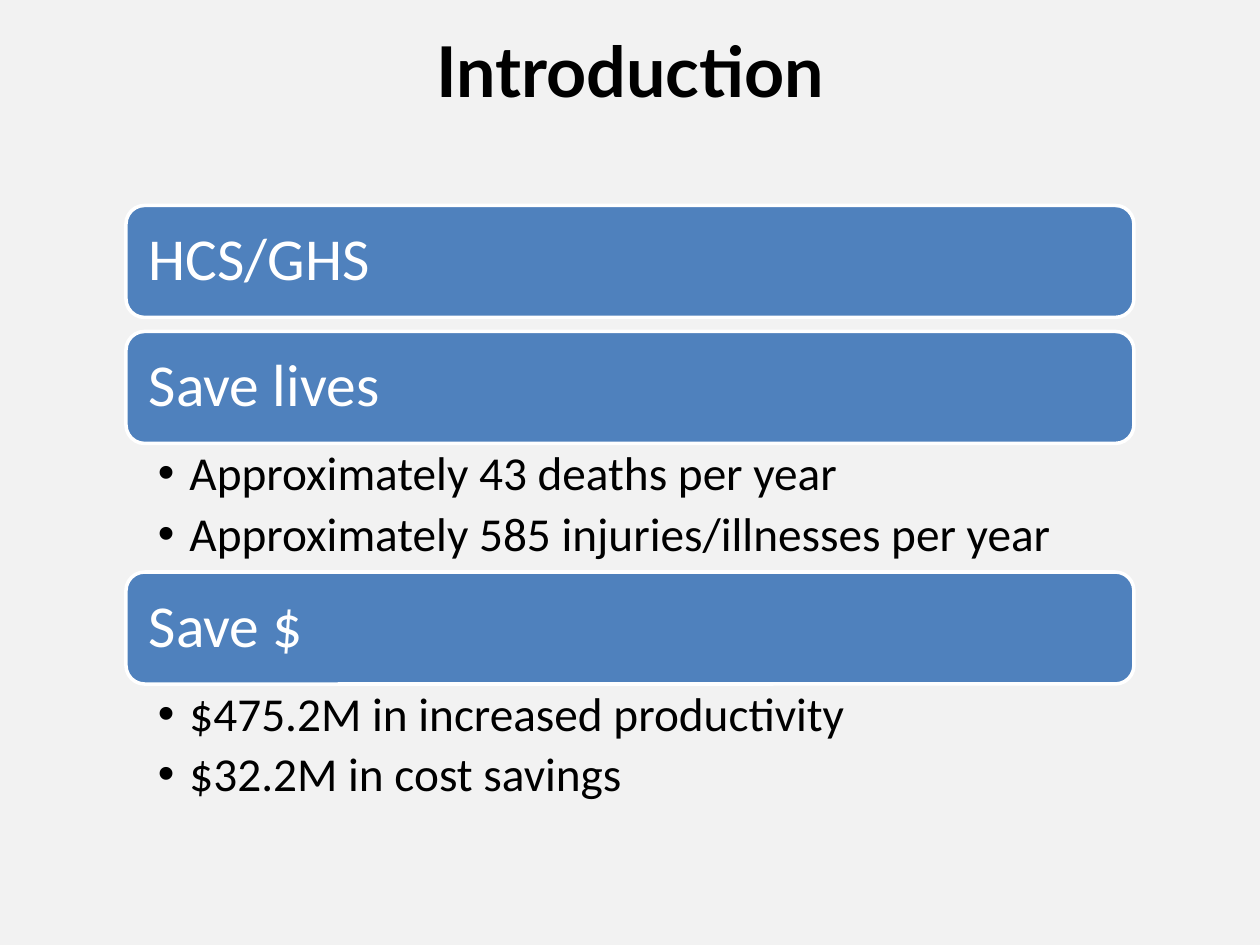
from pptx import Presentation
from pptx.dml.color import RGBColor
from pptx.enum.shapes import MSO_SHAPE
from pptx.enum.text import MSO_ANCHOR, PP_ALIGN
from pptx.oxml.ns import qn
from pptx.util import Pt
from lxml import etree

BACKGROUND = RGBColor(0xF2, 0xF2, 0xF2)
BLUE = RGBColor(0x4F, 0x81, 0xBD)
WHITE = RGBColor(0xFF, 0xFF, 0xFF)
BLACK = RGBColor(0x00, 0x00, 0x00)
ROUNDED = MSO_SHAPE.ROUNDED_RECTANGLE
TOP, MIDDLE = MSO_ANCHOR.TOP, MSO_ANCHOR.MIDDLE
LEFT, CENTER = PP_ALIGN.LEFT, PP_ALIGN.CENTER

TOPICS = [
    ("HCS/GHS", []),
    ("Save lives", ["Approximately 43 deaths per year",
                    "Approximately 585 injuries/illnesses per year"]),
    ("Save $", ["$475.2M in increased productivity",
                "$32.2M in cost savings"]),
]
BODY_LEFT, BODY_WIDTH = 72, 576
BAR_HEIGHT, BULLETS_HEIGHT, GAP = 64, 73.5, 8


def set_frame(frame, anchor, left, top, right, bottom):
    frame.word_wrap = True
    frame.vertical_anchor = anchor
    margins = {"margin_left": left, "margin_top": top,
               "margin_right": right, "margin_bottom": bottom}
    for name, value in margins.items():
        setattr(frame, name, Pt(value))


def write(paragraph, text, size, color, align=LEFT, face="Calibri", bold=False):
    paragraph.text = text
    paragraph.alignment = align
    font = paragraph.font
    for name, value in {"size": Pt(size), "name": face, "bold": bold}.items():
        setattr(font, name, value)
    font.color.rgb = color


prs = Presentation()
prs.slide_width, prs.slide_height = Pt(720), Pt(540)
slide = prs.slides.add_slide(prs.slide_layouts[5])
slide.background.fill.solid()
slide.background.fill.fore_color.rgb = BACKGROUND

# Title
title = slide.shapes.title
title.left, title.top, title.width, title.height = Pt(36), Pt(12.24), Pt(648), Pt(90)
set_frame(title.text_frame, TOP, 7.2, 3.6, 7.2, 3.6)
write(title.text_frame.paragraphs[0], "Introduction", 40, BLACK, CENTER, "Lato", True)

# Topic bars, each followed by its bullets or a gap
top = 117.4
for topic, points in TOPICS:
    bar = slide.shapes.add_shape(ROUNDED, Pt(BODY_LEFT), Pt(top),
                                 Pt(BODY_WIDTH), Pt(BAR_HEIGHT))
    bar.shadow.inherit = False
    bar.fill.solid()
    bar.fill.fore_color.rgb = BLUE
    bar.line.color.rgb = WHITE
    bar.line.width = Pt(2)
    set_frame(bar.text_frame, MIDDLE, 10, 10, 10, 10)
    heading = bar.text_frame.paragraphs[0]
    heading.line_spacing = 0.9
    write(heading, topic, 34, WHITE)
    top += BAR_HEIGHT

    if not points:
        top += GAP
        continue
    bullets = slide.shapes.add_textbox(Pt(BODY_LEFT), Pt(top),
                                       Pt(BODY_WIDTH), Pt(BULLETS_HEIGHT))
    frame = bullets.text_frame
    set_frame(frame, TOP, 18.3, 3.6, 18.7, 3.6)
    for i, point in enumerate(points):
        item = frame.add_paragraph() if i else frame.paragraphs[0]
        item.level = 1
        item.line_spacing = 0.9
        item.space_after = Pt(5.4)
        properties = item._p.get_or_add_pPr()
        properties.set("marL", str(Pt(18)))
        properties.set("indent", str(-Pt(18)))
        etree.SubElement(properties, qn("a:buFont"), typeface="Arial")
        etree.SubElement(properties, qn("a:buChar"), char="•")
        write(item, point, 27, BLACK)
    top += BULLETS_HEIGHT

prs.save("out.pptx")
